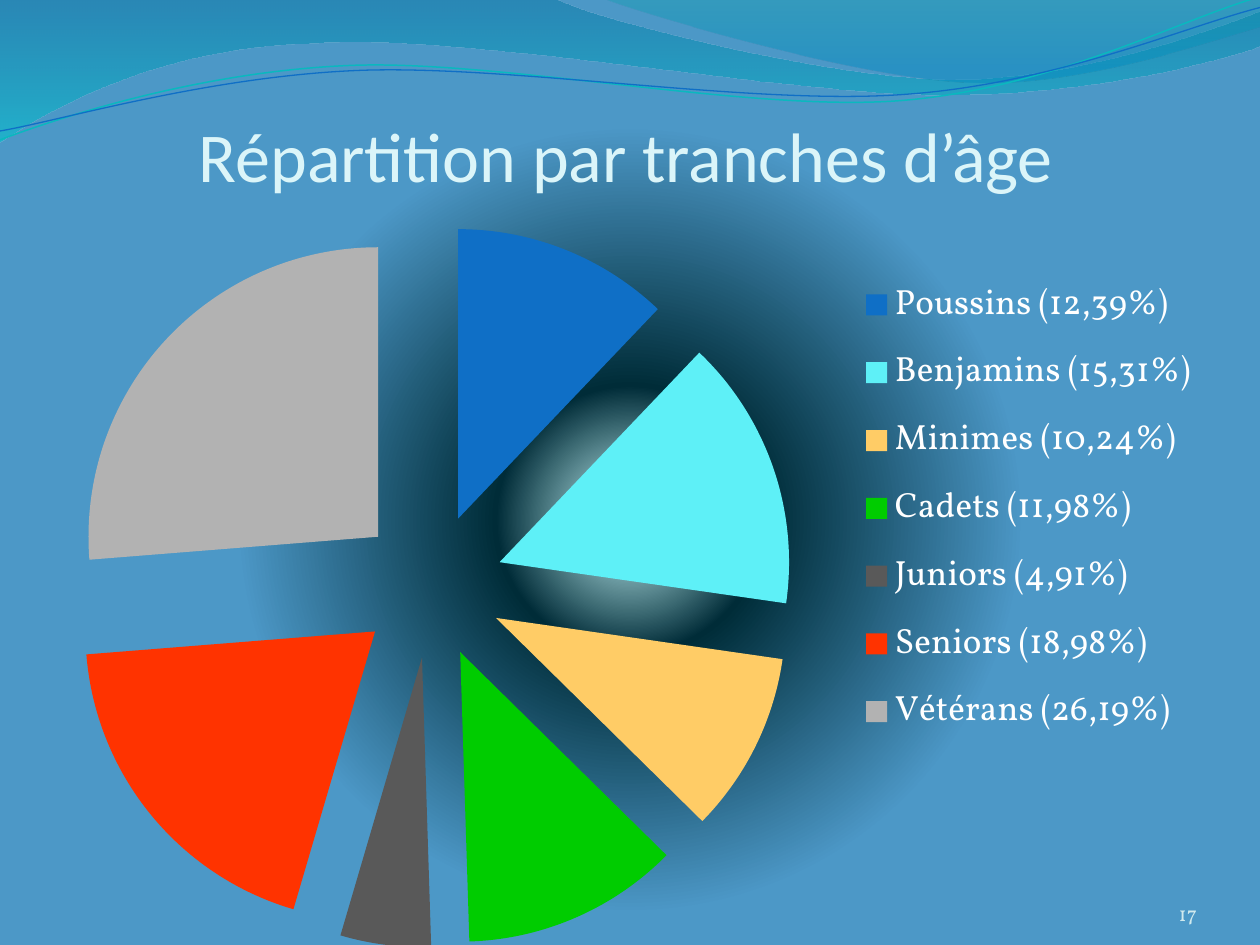
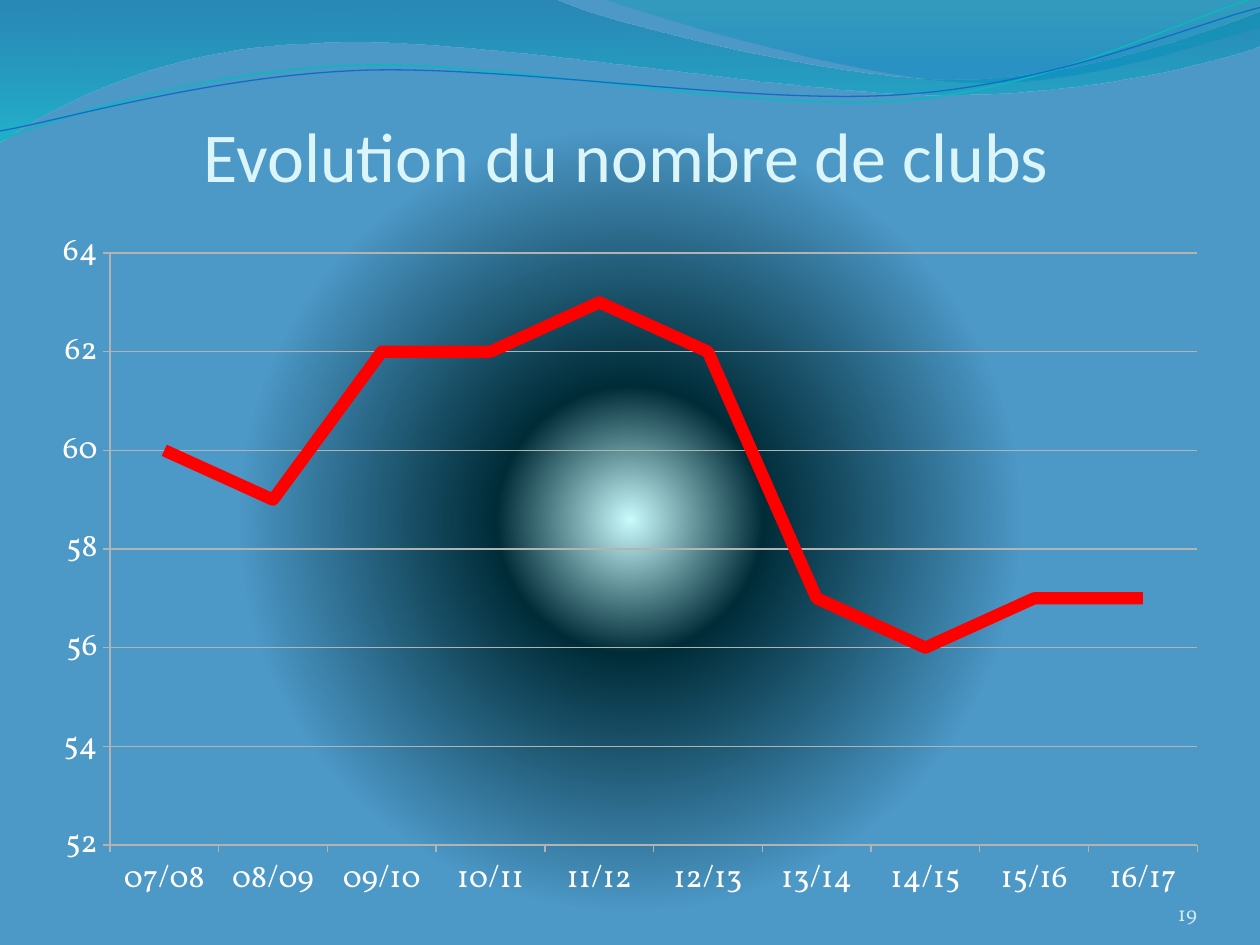
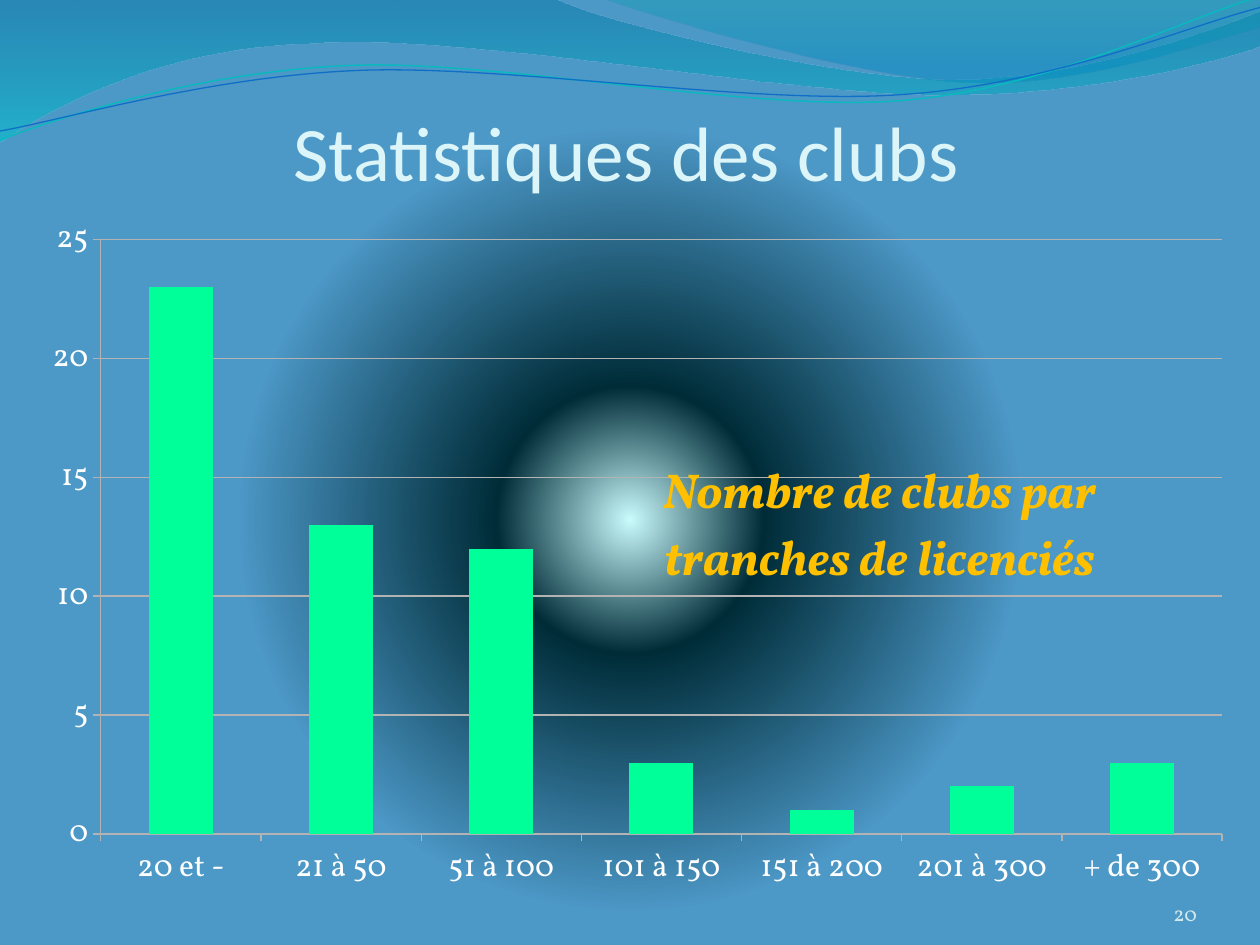
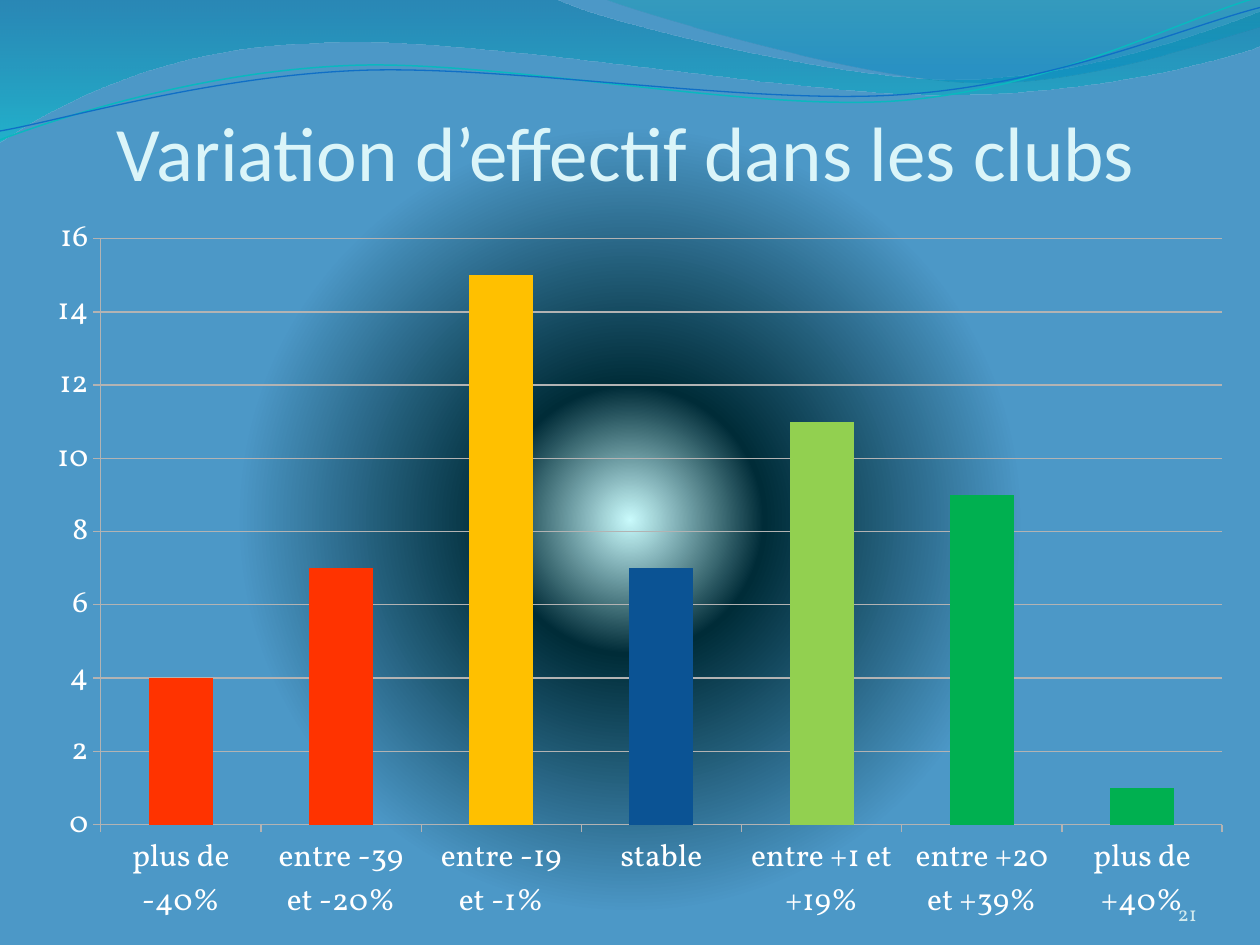
import math
from dataclasses import dataclass, field

import lxml.etree
import pptx
import pptx.chart.chart
import pptx.chart.data
import pptx.dml.color
import pptx.enum.chart
import pptx.enum.text
import pptx.oxml
import pptx.oxml.ns
import pptx.presentation
import pptx.shapes.autoshape
import pptx.slide
import pptx.util
from pptx.util import Inches, Pt

COLOURS = {
    "glow": "C9FAFC", "night": "002C38", "sky": "4C98C7",
    "wave_blue": "0074A1", "wave_aqua": "00C6CF",
    "crest_teal": "00A1A9", "crest_blue": "008BBF",
    "line_aqua": "0AB8BF", "line_blue": "0F6FC6",
    "title": "DBF5F9", "number": "D1EAEE", "white": "FFFFFF", "grid": "B3B3B3",
    "cyan": "5EF0F7", "sand": "FFCC66", "green": "00CC00", "dark_grey": "595959",
    "orange_red": "FF3300", "light_grey": "B2B2B2", "red": "FF0000",
    "mint": "00FF99", "amber": "FFC000", "navy": "0B5394",
    "lime": "92D050", "emerald": "00B050",
}
TITLE_FONT = "Calibri"
BODY_FONT = "Vollkorn"
ChartType = pptx.enum.chart.XL_CHART_TYPE
Align = pptx.enum.text.PP_ALIGN
tag = pptx.oxml.ns.qn


@dataclass(frozen=True)
class Box:
    left: float
    top: float
    width: float
    height: float

    def lengths(self) -> list[int]:
        return [Inches(n) for n in (self.left, self.top, self.width, self.height)]


@dataclass(frozen=True)
class Stop:
    percent: int
    colour: str
    opacity: int = 100


@dataclass(frozen=True)
class Wave:
    """Outline of points: two numbers are a corner, six are a Bézier curve."""
    outline: list[tuple[float, ...]]
    stops: tuple[Stop, ...] = ()
    line: str = ""
    line_width: float = 0
    tilt: float = 0
    pivot: tuple[float, float] = (0, 0)


@dataclass(frozen=True)
class Scale:
    low: int
    high: int
    step: int


@dataclass(frozen=True)
class ChartSlide:
    number: int
    title: str
    title_size: int
    kind: ChartType
    box: Box
    data: dict[str, int]
    colour: str = ""
    point_colours: dict[int, str] = field(default_factory=dict)
    scale: Scale | None = None
    caption: str = ""


TITLE_BOX = Box(0.47, 0.31, 9, 1.25)
NUMBER_BOX = Box(8.67, 6.95, 0.83, 0.4)
COLUMN_BOX = Box(0.16, 1.56, 9.69, 5.78)
COLUMN_PLOT = Box(0.8, 1.9, 8.9, 4.72)
LEGEND_BOX = Box(6.81, 2.08, 2.71, 3.91)
CAPTION_CORNER = Box(5.23, 3.62, 0, 0)

BACKGROUND_STOPS = (Stop(0, "glow"), Stop(17, "night"), Stop(50, "sky"))
BACKGROUND_SHADE = ('<a:path path="circle"><a:fillToRect l="10000" t="110000" '
                    'r="10000" b="100000"/></a:path>')
DOWNWARD_SHADE = '<a:lin ang="5400000" scaled="0"/>'

WAVES = [
    Wave([(0, 0), (4.4, -0.01), (4.76, 0.17, 6.64, 0.63, 7.58, 0.63),
          (8.53, 0.63, 9.58, 0.26, 10, 0.09), (10.01, 0.36),
          (9.83, 0.44, 8.7, 0.76, 7.46, 0.75), (6.22, 0.75, 3.82, 0.28, 2.57, 0.34),
          (1.29, 0.36, 0.46, 0.83, -0.01, 1.13)],
         stops=(Stop(0, "wave_blue", 45), Stop(100, "wave_aqua", 55))),
    Wave([(4.79, -0.01), (5.09, 0.11, 6.82, 0.62, 7.69, 0.65),
          (8.56, 0.69, 9.61, 0.32, 10, 0.21), (10, 0)],
         stops=(Stop(0, "crest_teal", 30), Stop(80, "crest_blue", 45))),
    Wave([(0, 1.11), (0.48, 0.93, 1.58, 0.57, 2.77, 0.52),
          (3.95, 0.47, 5.93, 0.89, 7.13, 0.8), (8.33, 0.71, 9.38, 0.15, 9.98, -0.02)],
         line="line_aqua", line_width=0.85, tilt=-2.7, pivot=(4.99, 0.57)),
    Wave([(0, 1.04), (0.47, 0.96, 1.64, 0.61, 2.83, 0.56),
          (4.03, 0.51, 5.97, 0.84, 7.17, 0.75), (8.36, 0.67, 9.41, 0.21, 10, 0.06)],
         line="line_blue", line_width=0.75, tilt=-2.7, pivot=(5, 0.59)),
]

SLIDES = [
    ChartSlide(
        17, "Répartition par tranches d’âge", 40, ChartType.PIE, Box(0, 1.64, 9.69, 6.02),
        {"Poussins (12,39%)": 12, "Benjamins (15,31%)": 15, "Minimes (10,24%)": 10,
         "Cadets (11,98%)": 12, "Juniors (4,91%)": 5, "Seniors (18,98%)": 19,
         "Vétérans (26,19%)": 26},
        point_colours=dict(enumerate(["line_blue", "cyan", "sand", "green", "dark_grey",
                                      "orange_red", "light_grey"]))),
    ChartSlide(
        19, "Evolution du nombre de clubs", 40, ChartType.LINE_STACKED,
        Box(0.31, 1.72, 9.38, 5.55),
        {"07/08": 60, "08/09": 59, "09/10": 62, "10/11": 62, "11/12": 63,
         "12/13": 62, "13/14": 57, "14/15": 56, "15/16": 57, "16/17": 57},
        colour="red", scale=Scale(52, 64, 2)),
    ChartSlide(
        20, "Statistiques des clubs", 44, ChartType.COLUMN_CLUSTERED, COLUMN_BOX,
        {"20 et -": 23, "21 à 50": 13, "51 à 100": 12, "101 à 150": 3,
         "151 à 200": 1, "201 à 300": 2, "+ de 300": 3},
        colour="mint", scale=Scale(0, 25, 5),
        caption="Nombre de clubs par\ntranches de licenciés"),
    ChartSlide(
        21, "Variation d’effectif dans les clubs", 44, ChartType.COLUMN_CLUSTERED, COLUMN_BOX,
        {"plus de -40%": 4, "entre -39 et -20%": 7, "entre -19 et -1%": 15, "stable": 7,
         "entre +1 et +19%": 11, "entre +20 et +39%": 9, "plus de +40%": 1},
        colour="orange_red", scale=Scale(0, 16, 2),
        point_colours={2: "amber", 3: "navy", 4: "lime", 5: "emerald", 6: "emerald"}),
]


def rgb(name: str) -> pptx.dml.color.RGBColor:
    return pptx.dml.color.RGBColor.from_string(COLOURS[name])


def style_font(font, name: str, size: float, colour: str) -> None:
    font.name = name
    font.size = Pt(size)
    font.color.rgb = rgb(colour)


def swap_in_gradient(parent, stops: tuple[Stop, ...], shade: str) -> None:
    """Put a gradient where the parent element has its solid fill."""
    stop_xml = "".join(
        f'<a:gs pos="{stop.percent * 1000}"><a:srgbClr val="{COLOURS[stop.colour]}">'
        f'<a:alpha val="{stop.opacity * 1000}"/></a:srgbClr></a:gs>' for stop in stops)
    gradient = pptx.oxml.parse_xml(
        f'<a:gradFill {pptx.oxml.ns.nsdecls("a")} rotWithShape="1">'
        f'<a:gsLst>{stop_xml}</a:gsLst>{shade}</a:gradFill>')
    parent.replace(parent.find(tag("a:solidFill")), gradient)


def untilted_points(wave: Wave) -> list[list[tuple[int, int]]]:
    """Points of each outline part, turned back by the tilt the shape will get."""
    sine, cosine = math.sin(math.radians(-wave.tilt)), math.cos(math.radians(wave.tilt))
    pivot_x, pivot_y = wave.pivot

    def turn(x: float, y: float) -> tuple[int, int]:
        x, y = x - pivot_x, y - pivot_y
        return (Inches(pivot_x + x * cosine - y * sine),
                Inches(pivot_y + x * sine + y * cosine))

    return [[turn(*pair) for pair in zip(part[::2], part[1::2])] for part in wave.outline]


def bend_segments(shape: pptx.shapes.autoshape.Shape,
                  parts: list[list[tuple[int, int]]]) -> None:
    """Turn the straight segments that have control points into curves."""
    segments = shape.element.findall(".//" + tag("a:lnTo"))
    for segment, part in zip(segments, parts):
        if len(part) == 1:
            continue
        curve = lxml.etree.Element(tag("a:cubicBezTo"))
        for x, y in part:
            point = lxml.etree.SubElement(curve, tag("a:pt"))
            point.set("x", str(x - shape.left))
            point.set("y", str(y - shape.top))
        segment.getparent().replace(segment, curve)


def draw_wave(slide: pptx.slide.Slide, wave: Wave) -> pptx.shapes.autoshape.Shape:
    start, *parts = untilted_points(wave)
    builder = slide.shapes.build_freeform(*start[0])
    builder.add_line_segments([part[-1] for part in parts], close=bool(wave.stops))
    shape = builder.convert_to_shape()
    bend_segments(shape, parts)
    shape.rotation = wave.tilt
    shape.shadow.inherit = False
    if wave.stops:
        shape.fill.solid()
        swap_in_gradient(shape.element.spPr, wave.stops, DOWNWARD_SHADE)
        shape.line.fill.background()
    else:
        shape.fill.background()
        shape.line.color.rgb = rgb(wave.line)
        shape.line.width = Pt(wave.line_width)
    return shape


def dress_shared_layout(presentation: pptx.presentation.Presentation,
                        layout: pptx.slide.SlideLayout, slide: pptx.slide.Slide) -> None:
    """Give the master its background and move the waves, drawn on slide, to the layout."""
    master = presentation.slide_master
    master.background.fill.solid()
    background = master.element.find(".//" + tag("p:bgPr"))
    swap_in_gradient(background, BACKGROUND_STOPS, BACKGROUND_SHADE)
    for placeholder in list(layout.placeholders):
        placeholder.element.getparent().remove(placeholder.element)
    shapes = [draw_wave(slide, wave) for wave in WAVES]
    for shape in shapes:
        layout.shapes.element.append(shape.element)


def add_label(slide: pptx.slide.Slide, text: str, box: Box, align: Align,
              font_name: str, size: int, colour: str, top_inset: float = 0) -> None:
    frame = slide.shapes.add_textbox(*box.lengths()).text_frame
    frame.word_wrap = True
    frame.vertical_anchor = pptx.enum.text.MSO_ANCHOR.BOTTOM
    frame.margin_left = frame.margin_right = frame.margin_bottom = 0
    frame.margin_top = Inches(top_inset)
    paragraph = frame.paragraphs[0]
    paragraph.text = text
    paragraph.alignment = align
    style_font(paragraph.font, font_name, size, colour)


def place_in_chart(parent, box: Box, chart_box: Box, index: int, inner: bool = False) -> None:
    """Fix a chart part at a box on the slide; a box without width fixes its corner only."""
    values = {"layoutTarget": "inner"} if inner else {}
    values |= {"xMode": "edge", "yMode": "edge",
               "x": (box.left - chart_box.left) / chart_box.width,
               "y": (box.top - chart_box.top) / chart_box.height}
    if box.width:
        values |= {"w": box.width / chart_box.width, "h": box.height / chart_box.height}
    for old in parent.findall(tag("c:layout")):
        parent.remove(old)
    layout = lxml.etree.Element(tag("c:layout"))
    manual = lxml.etree.SubElement(layout, tag("c:manualLayout"))
    for name, value in values.items():
        lxml.etree.SubElement(manual, tag(f"c:{name}")).set("val", str(value))
    parent.insert(index, layout)


def style_axes(chart: pptx.chart.chart.Chart, scale: Scale) -> None:
    value_axis = chart.value_axis
    value_axis.minimum_scale = scale.low
    value_axis.maximum_scale = scale.high
    value_axis.major_unit = scale.step
    value_axis.has_major_gridlines = True
    for item in (value_axis.major_gridlines, value_axis, chart.category_axis):
        item.format.line.color.rgb = rgb("grid")
        item.format.line.width = Pt(0.75)
    for axis in (value_axis, chart.category_axis):
        axis.major_tick_mark = pptx.enum.chart.XL_TICK_MARK.OUTSIDE


def style_pie(chart: pptx.chart.chart.Chart, chart_box: Box) -> None:
    """Pull the slices apart and name them in a legend on the right."""
    explosion = lxml.etree.Element(tag("c:explosion"))
    explosion.set("val", "25")
    chart.plots[0].series[0]._element.find(tag("c:tx")).addnext(explosion)
    chart.has_legend = True
    chart.legend.position = pptx.enum.chart.XL_LEGEND_POSITION.RIGHT
    chart.legend.include_in_layout = False
    style_font(chart.legend.font, BODY_FONT, 20, "white")
    place_in_chart(chart.legend._element, LEGEND_BOX, chart_box, 1)


def add_caption(chart: pptx.chart.chart.Chart, caption: str, chart_box: Box) -> None:
    title = chart.chart_title
    title.text_frame.text = caption
    for paragraph in title.text_frame.paragraphs:
        style_font(paragraph.font, BODY_FONT, 28, "amber")
        paragraph.font.bold = paragraph.font.italic = True
    place_in_chart(title._element, CAPTION_CORNER, chart_box, 1)
    title._element.find(tag("c:overlay")).set("val", "1")


def add_chart(slide: pptx.slide.Slide, spec: ChartSlide) -> None:
    data = pptx.chart.data.CategoryChartData()
    data.categories = list(spec.data)
    data.add_series("Series 1", list(spec.data.values()))
    chart = slide.shapes.add_chart(spec.kind, *spec.box.lengths(), data).chart
    style_font(chart.font, BODY_FONT, 18, "white")
    chart.has_title = bool(spec.caption)
    chart.has_legend = False
    plot = chart.plots[0]
    plot.vary_by_categories = spec.kind == ChartType.PIE
    series = plot.series[0]

    if spec.scale:
        style_axes(chart, spec.scale)
    if spec.kind == ChartType.PIE:
        style_pie(chart, spec.box)
    elif spec.kind == ChartType.LINE_STACKED:
        series.smooth = False
        series.marker.style = pptx.enum.chart.XL_MARKER_STYLE.NONE
        series.format.line.color.rgb = rgb(spec.colour)
        series.format.line.width = Pt(7)
    else:
        plot.gap_width = 150
        series.invert_if_negative = False
        series.format.fill.solid()
        series.format.fill.fore_color.rgb = rgb(spec.colour)
        place_in_chart(chart._chartSpace.chart.plotArea, COLUMN_PLOT, spec.box, 0, inner=True)
    for index, colour in spec.point_colours.items():
        fill = series.points[index].format.fill
        fill.solid()
        fill.fore_color.rgb = rgb(colour)
    if spec.caption:
        add_caption(chart, spec.caption, spec.box)


def main() -> None:
    presentation = pptx.Presentation()
    presentation.slide_width = Inches(10)
    presentation.slide_height = Inches(7.5)
    layout = presentation.slide_layouts[6]
    for position, chart_slide in enumerate(SLIDES):
        slide = presentation.slides.add_slide(layout)
        if position == 0:
            dress_shared_layout(presentation, layout, slide)
        add_label(slide, chart_slide.title, TITLE_BOX, Align.CENTER, TITLE_FONT,
                  chart_slide.title_size, "title", top_inset=0.05)
        add_chart(slide, chart_slide)
        add_label(slide, str(chart_slide.number), NUMBER_BOX, Align.RIGHT, BODY_FONT,
                  12, "number")
    presentation.save("out.pptx")


if __name__ == "__main__":
    main()
